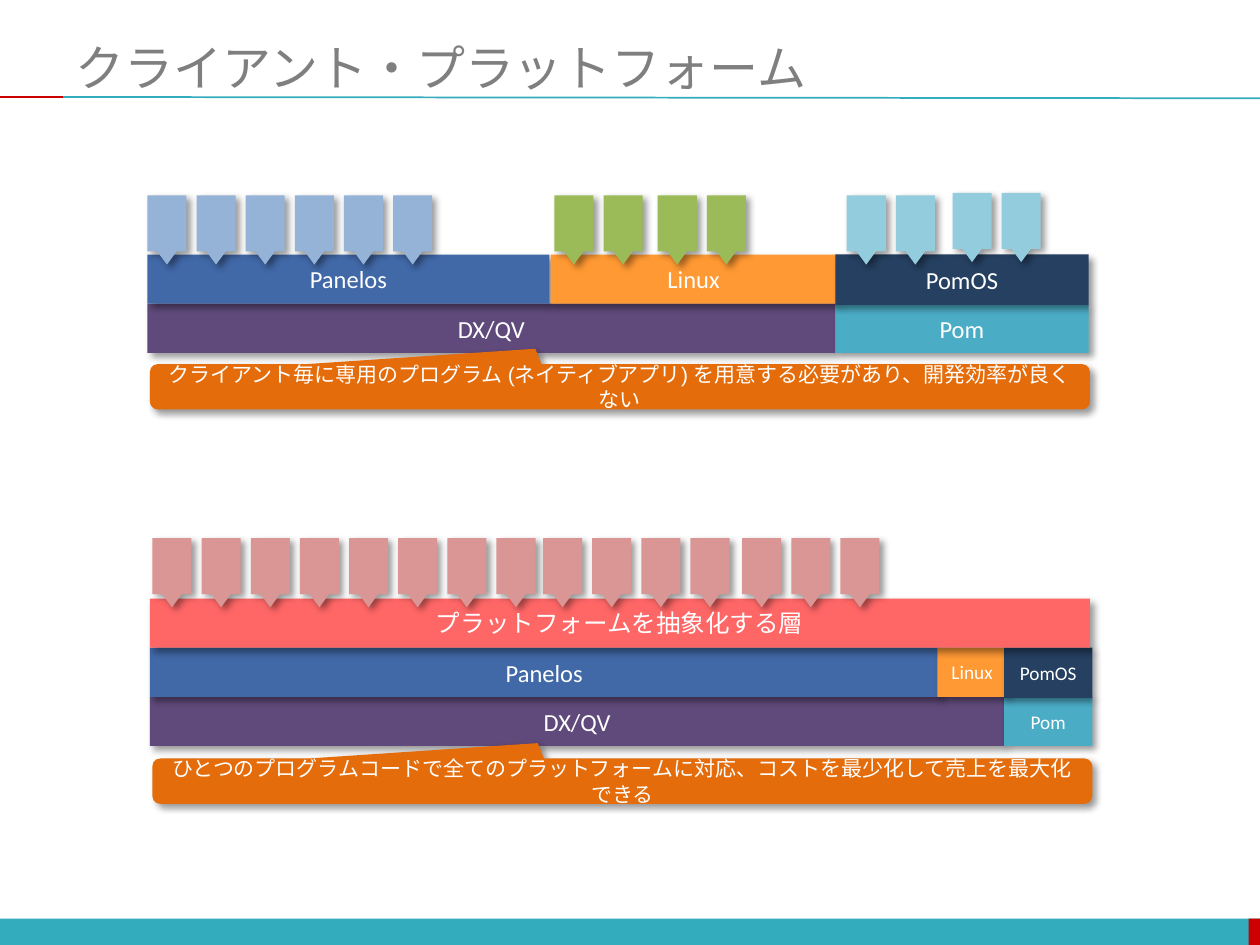
from dataclasses import dataclass

from lxml import etree
from pptx import Presentation
from pptx.dml.color import RGBColor
from pptx.enum import shapes, text
from pptx.oxml.ns import qn
from pptx.util import Inches, Pt

KIND = shapes.MSO_SHAPE


@dataclass(frozen=True)
class Theme:
    teal: str = "33ACBD"
    red: str = "CC0000"
    gray: str = "7F7F7F"
    white: str = "FFFFFF"
    purple: str = "604A7B"
    aqua: str = "4BACC6"
    blue: str = "4168A7"
    orange: str = "FF9933"
    navy: str = "254061"
    coral: str = "FF6666"
    note: str = "E46C0A"
    sky: str = "95B3D7"
    green: str = "9BBB59"
    pale: str = "93CDDD"
    rose: str = "D99694"
    head: int = 28
    large: int = 14
    body: int = 12
    small: int = 11
    latin: str = "Calibri"
    sans: str = "Arial"


T = Theme()


@dataclass(frozen=True)
class Layer:
    label: str
    fill: str
    left: float
    top: float
    width: float
    height: float = 0.39
    size: int = T.large


@dataclass(frozen=True)
class Apps:
    """A run of equally spaced application tags."""
    fill: str
    left: float
    top: float
    count: int


@dataclass(frozen=True)
class Note:
    label: str
    left: float
    top: float


@dataclass(frozen=True)
class Stack:
    layers: tuple[Layer, ...]
    apps: tuple[Apps, ...]
    note: Note


NATIVE = Stack(
    layers=(
        Layer("DX/QV", T.purple, 1.17, 2.41, 5.46),
        Layer("Pom", T.aqua, 6.63, 2.42, 2.01, 0.38),
        Layer("Panelos", T.blue, 1.17, 2.02, 3.19),
        Layer("Linux", T.orange, 4.37, 2.02, 2.27),
        Layer("PomOS", T.navy, 6.63, 2.02, 2.01, 0.4),
    ),
    apps=(
        Apps(T.sky, 1.17, 1.55, 6),
        Apps(T.green, 4.4, 1.55, 2),
        Apps(T.green, 5.22, 1.55, 2),
        Apps(T.pale, 6.72, 1.55, 2),
        Apps(T.pale, 7.56, 1.53, 2),
    ),
    note=Note("クライアント毎に専用のプログラム (ネイティブアプリ) を用意する必要があり、"
              "開発効率が良くない", 1.19, 2.89),
)

SHARED = Stack(
    layers=(
        Layer("DX/QV", T.purple, 1.19, 5.53, 6.78),
        Layer("Pom", T.aqua, 7.97, 5.53, 0.7, size=T.small),
        Layer("Panelos", T.blue, 1.19, 5.14, 6.26),
        Layer("Linux", T.orange, 7.44, 5.14, 0.55, size=T.small),
        Layer("PomOS", T.navy, 7.97, 5.14, 0.7, 0.4, T.small),
        Layer("プラットフォームを抽象化する層", T.coral, 1.19, 4.75, 7.46),
    ),
    apps=(
        Apps(T.rose, 1.21, 4.27, 8),
        Apps(T.rose, 4.31, 4.27, 4),
        Apps(T.rose, 5.89, 4.27, 3),
    ),
    note=Note("ひとつのプログラムコードで全てのプラットフォームに対応、"
              "コストを最少化して売上を最大化できる", 1.21, 6.02),
)


def write(shape, words: str, *, size: int, color: str = T.white,
          font: str = T.latin, align=text.PP_ALIGN.CENTER) -> None:
    frame = shape.text_frame
    frame.word_wrap = True
    frame.auto_size = text.MSO_AUTO_SIZE.NONE
    frame.vertical_anchor = text.MSO_ANCHOR.MIDDLE
    line = frame.paragraphs[0]
    line.alignment = align
    run = line.add_run()
    run.text = words
    run.font.size = Pt(size)
    run.font.name = font
    run.font.color.rgb = RGBColor.from_string(color)


def cast(shape) -> None:
    """Give the shape a soft shadow to the lower right."""
    list_ = shape._element.spPr.find(qn("a:effectLst"))
    outer = etree.SubElement(list_, qn("a:outerShdw"), blurRad=str(Pt(4)),
                             dist=str(Pt(3)), dir="2700000", algn="tl",
                             rotWithShape="0")
    color = etree.SubElement(outer, qn("a:srgbClr"), val="000000")
    etree.SubElement(color, qn("a:alpha"), val="40000")


def block(slide, kind, box: tuple[float, ...], fill: str,
          shade: bool = True, adjust: tuple[float, ...] = ()):
    shape = slide.shapes.add_shape(kind, *map(Inches, box))
    shape.fill.solid()
    shape.fill.fore_color.rgb = RGBColor.from_string(fill)
    shape.line.fill.background()
    shape.shadow.inherit = False
    if shade:
        cast(shape)
    for i, value in enumerate(adjust):
        shape.adjustments[i] = value
    return shape


def rule(slide, ends: tuple[float, ...], color: str) -> None:
    line = slide.shapes.add_connector(shapes.MSO_CONNECTOR.STRAIGHT,
                                      *map(Inches, ends))
    line.line.color.rgb = RGBColor.from_string(color)
    line.line.width = Pt(1)
    etree.SubElement(line._element.spPr, qn("a:effectLst"))


def frame(slide) -> None:
    """Draw the footer band and the rule under the title."""
    block(slide, KIND.RECTANGLE, (0, 7.29, 10, 0.22), T.teal, shade=False)
    block(slide, KIND.RECTANGLE, (9.91, 7.29, 0.1, 0.22), T.red, shade=False)
    rule(slide, (0.5, 0.77, 10, 0.78), T.teal)
    rule(slide, (0, 0.77, 0.5, 0.77), T.red)


def title(slide, words: str) -> None:
    head = slide.shapes.title
    head.left, head.top, head.width, head.height = map(
        Inches, (0.5, 0.3, 9.5, 0.46))
    write(head, words, size=T.head, color=T.gray, align=text.PP_ALIGN.LEFT)


def draw(slide, stack: Stack) -> None:
    for item in stack.layers:
        box = (item.left, item.top, item.width, item.height)
        write(block(slide, KIND.RECTANGLE, box, item.fill),
              item.label, size=item.size)
    for row in stack.apps:
        for i in range(row.count):
            block(slide, KIND.DOWN_ARROW_CALLOUT,
                  (row.left + 0.39 * i, row.top, 0.31, 0.55), row.fill,
                  adjust=(0.5, 0.25, 0.34, 0.82))
    note = stack.note
    shape = block(slide, KIND.ROUNDED_RECTANGULAR_CALLOUT,
                  (note.left, note.top, 7.46, 0.36), T.note,
                  adjust=(-0.09, -0.84, 0.17))
    write(shape, note.label, size=T.body, font=T.sans)


def main() -> None:
    deck = Presentation()
    deck.slide_width, deck.slide_height = Inches(10), Inches(7.5)
    slide = deck.slides.add_slide(deck.slide_layouts[5])
    frame(slide)
    title(slide, "クライアント・プラットフォーム")
    for stack in (NATIVE, SHARED):
        draw(slide, stack)
    deck.save("out.pptx")


if __name__ == "__main__":
    main()
